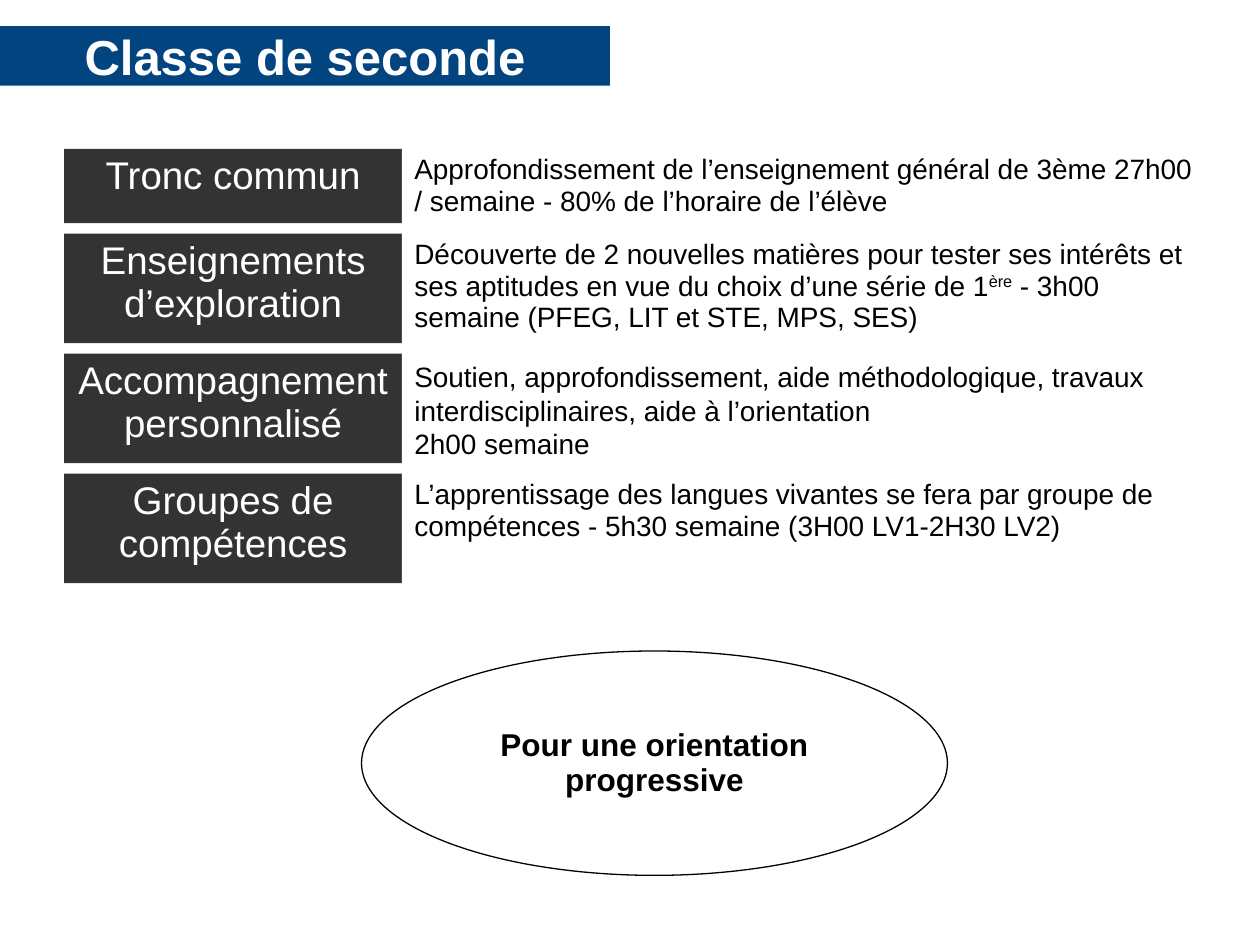
from pptx import Presentation
from pptx.dml.color import RGBColor
from pptx.enum.shapes import MSO_SHAPE as SHAPE
from pptx.enum.text import MSO_ANCHOR as ANCHOR, MSO_AUTO_SIZE as AUTO, PP_ALIGN as ALIGN
from pptx.util import Pt

ROWS = [
    ("Tronc commun", 42.5, 0.93,
     ["Approfondissement de l’enseignement général de 3ème 27h00 / semaine - 80% de l’horaire de l’élève"]),
    ("Enseignements d’exploration", 62.6, 0.93,
     ["Découverte de 2 nouvelles matières pour tester ses intérêts et ses aptitudes en vue du choix "
      "d’une série de 1", ("ère", 30), " - 3h00 semaine (PFEG, LIT et STE, MPS, SES)"]),
    ("Accompagnement personnalisé", 62.6, 1.0,
     ["Soutien, approfondissement, aide méthodologique, travaux interdisciplinaires, "
      "aide à l’orientation\n2h00 semaine"]),
    ("Groupes de compétences", 62.6, 0.93,
     ["L’apprentissage des langues vivantes se fera par groupe de compétences - 5h30 semaine "
      "(3H00 LV1-2H30 LV2)"]),
]


def rgb(value):
    """Turn a hex string into a colour."""
    return RGBColor.from_string(value)


def write(sp, parts, size, color="000000", bold=False, align=ALIGN.LEFT, anchor=ANCHOR.TOP, spacing=1.0):
    """Write strings or (string, superscript percent) pairs as one paragraph; newlines break lines."""
    tf = sp.text_frame
    tf.word_wrap, tf.auto_size, tf.vertical_anchor = True, AUTO.NONE, anchor
    p = tf.paragraphs[0]
    p.alignment, p.line_spacing = align, spacing
    for part in parts:
        text, raised = part if isinstance(part, tuple) else (part, 0)
        for i, line in enumerate(text.split("\n")):
            if i:
                p.add_line_break()
            r = p.add_run()
            r.text = line
            r.font.name, r.font.size, r.font.bold = "Arial", Pt(size), bold
            r.font.color.rgb = rgb(color)
            if raised:
                r._r.get_or_add_rPr().set("baseline", str(raised * 1000))


def add_box(slide, kind, box, fill=None, line=None):
    """Add a flat preset shape in the given box."""
    sp = slide.shapes.add_shape(kind, *map(Pt, box))
    sp.shadow.inherit = False
    if fill:
        sp.fill.solid()
        sp.fill.fore_color.rgb = rgb(fill)
    else:
        sp.fill.background()
    if line:
        sp.line.color.rgb = rgb(line)
        sp.line.width = Pt(0.75)
    else:
        sp.line.fill.background()
    return sp


def add_title(slide, box, text):
    """Place the title placeholder as a blue banner."""
    sp = slide.shapes.title
    sp.left, sp.top, sp.width, sp.height = map(Pt, box)
    sp.fill.solid()
    sp.fill.fore_color.rgb = rgb("024480")
    write(sp, [text], 28, "FFFFFF", True, ALIGN.CENTER, ANCHOR.MIDDLE)


def add_rows(slide, box, rows, label_width=193, gap=6):
    """Stack the dark labels with their descriptions."""
    left, top, width = box
    for label, height, spacing, parts in rows:
        sp = add_box(slide, SHAPE.RECTANGLE, (left, top, label_width, height), "333333")
        write(sp, [label], 22, "FFFFFF", align=ALIGN.CENTER, spacing=0.93)
        sp = add_box(slide, SHAPE.RECTANGLE, (left + label_width, top, width - label_width, height), "FFFFFF")
        write(sp, parts, 16, spacing=spacing)
        top += height + gap


def add_conclusion(slide, box, text):
    """Place the closing message in an outlined ellipse."""
    sp = add_box(slide, SHAPE.OVAL, box, line="000000")
    write(sp, [text], 18, bold=True, align=ALIGN.CENTER, anchor=ANCHOR.MIDDLE, spacing=0.93)


def main():
    """Build and save the slide."""
    prs = Presentation()
    prs.slide_width, prs.slide_height = Pt(720), Pt(540)
    slide = prs.slides.add_slide(prs.slide_layouts[5])
    add_title(slide, (0, 15, 348.5, 34), "Classe de seconde")
    add_rows(slide, (36.7, 85, 652), ROWS)
    add_conclusion(slide, (206.6, 372, 334.8, 128.2), "Pour une orientation progressive")
    prs.save("out.pptx")


if __name__ == "__main__":
    main()
